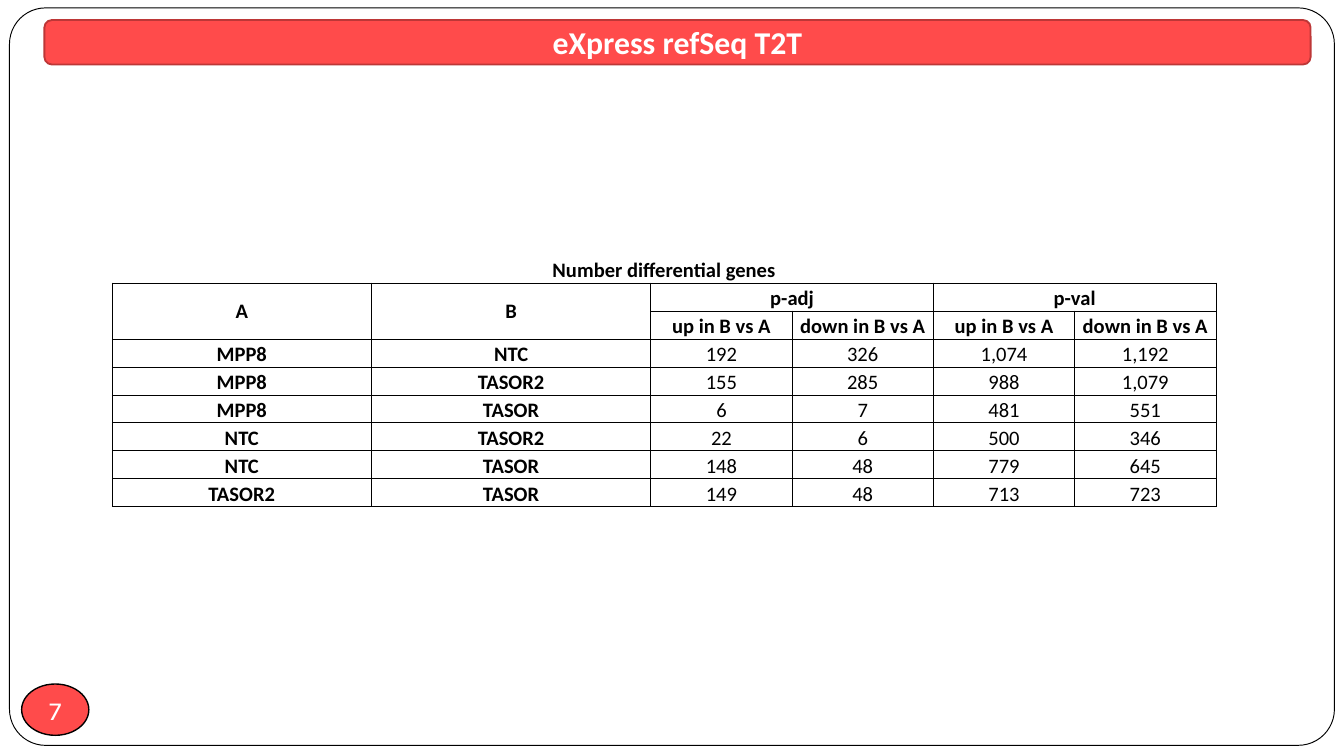
from lxml.etree import SubElement
from pptx import Presentation
from pptx.dml.color import RGBColor
from pptx.enum.shapes import MSO_SHAPE as Shape
from pptx.enum.text import MSO_ANCHOR as Anchor, PP_ALIGN as Align
from pptx.oxml.ns import qn
from pptx.util import Cm, Pt

COLORS = {"white": "FFFFFF", "black": "000000", "red": "FF4B4B", "dark_red": "BD3737"}

COLUMN_WIDTHS = [4.9, 5.28] + [2.67] * 4
DIRECTIONS = ["up in B vs A", "down in B vs A"]
HEADER_ROWS = [
    ["Number differential genes"] + [""] * 5,
    ["A", "B", "p-adj", "", "p-val", ""],
    ["", ""] + DIRECTIONS * 2,
]
GENE_ROWS = [
    ["MPP8", "NTC", "192", "326", "1,074", "1,192"],
    ["MPP8", "TASOR2", "155", "285", "988", "1,079"],
    ["MPP8", "TASOR", "6", "7", "481", "551"],
    ["NTC", "TASOR2", "22", "6", "500", "346"],
    ["NTC", "TASOR", "148", "48", "779", "645"],
    ["TASOR2", "TASOR", "149", "48", "713", "723"],
]
# First and last (row, column) of each merged header cell
MERGES = [((0, 0), (0, 5)), ((1, 0), (2, 0)), ((1, 1), (2, 1)),
          ((1, 2), (1, 3)), ((1, 4), (1, 5))]


def rgb(name):
    return RGBColor.from_string(COLORS[name])


def write_text(frame, text, size, color="black", font="Calibri", bold=False):
    para = frame.paragraphs[0]
    para.alignment = Align.CENTER
    span = para.add_run()
    span.text = text
    span.font.size = Pt(size)
    span.font.name = font
    span.font.bold = bold
    span.font.color.rgb = rgb(color)


def add_panel(page, kind, box, fill, line, line_width):
    panel = page.shapes.add_shape(kind, *map(Cm, box))
    panel.shadow.inherit = False
    panel.fill.solid()
    panel.fill.fore_color.rgb = rgb(fill)
    panel.line.color.rgb = rgb(line)
    panel.line.width = Pt(line_width)
    panel.text_frame.vertical_anchor = Anchor.MIDDLE
    return panel


def add_frame(page, box):
    frame = add_panel(page, Shape.ROUNDED_RECTANGLE, box, "white", "black", 0.5)
    frame.adjustments[0] = 0.049


def add_page_number(page, box, number):
    badge = add_panel(page, Shape.OVAL, box, "red", "black", 0.75)
    text = badge.text_frame
    text.margin_left = text.margin_right = text.margin_top = text.margin_bottom = 0
    text.word_wrap = False
    write_text(text, number, 14, "white", "Karla")


def add_title(page, box, title):
    banner = add_panel(page, Shape.ROUNDED_RECTANGLE, box, "red", "dark_red", 1)
    write_text(banner.text_frame, title, 17, "white", bold=True)


def set_borders(cell, sides):
    """Draw a thin black line on the given sides and none on the others."""
    properties = cell._tc.get_or_add_tcPr()
    for side in "LRTB":
        line = SubElement(properties, qn(f"a:ln{side}"), w=str(Pt(0.5)))
        if side in sides:
            fill = SubElement(line, qn("a:solidFill"))
            SubElement(fill, qn("a:srgbClr"), val=COLORS["black"])
        else:
            SubElement(line, qn("a:noFill"))


def add_gene_table(page, box):
    rows = HEADER_ROWS + GENE_ROWS
    table = page.shapes.add_table(len(rows), len(COLUMN_WIDTHS), *map(Cm, box)).table
    table.first_row = table.horz_banding = False
    for column, width in zip(table.columns, COLUMN_WIDTHS):
        column.width = Cm(width)
    for row in table.rows:
        row.height = Cm(box[3] / len(rows))
    for first, last in MERGES:
        table.cell(*first).merge(table.cell(*last))

    for r, texts in enumerate(rows):
        for c, text in enumerate(texts):
            cell = table.cell(r, c)
            set_borders(cell, "B" if r == 0 else "LRTB")
            cell.fill.background()
            cell.margin_left = cell.margin_right = cell.margin_top = Cm(0.02)
            cell.margin_bottom = 0
            tall = cell.is_merge_origin and cell.span_height > 1
            cell.vertical_anchor = Anchor.MIDDLE if tall else Anchor.BOTTOM
            if text:
                write_text(cell.text_frame, text, 11,
                           bold=r < len(HEADER_ROWS) or c < 2)


def main():
    deck = Presentation()
    deck.slide_width, deck.slide_height = Cm(25.4), Cm(14.29)
    page = deck.slides.add_slide(deck.slide_layouts[6])
    add_frame(page, (0.18, 0.15, 25.04, 13.94))
    add_page_number(page, (0.41, 12.93, 1.27, 0.97), "7")
    add_title(page, (0.84, 0.38, 23.93, 0.84), "eXpress refSeq T2T")
    add_gene_table(page, (2.12, 4.82, sum(COLUMN_WIDTHS), 4.77))
    deck.save("out.pptx")


if __name__ == "__main__":
    main()
